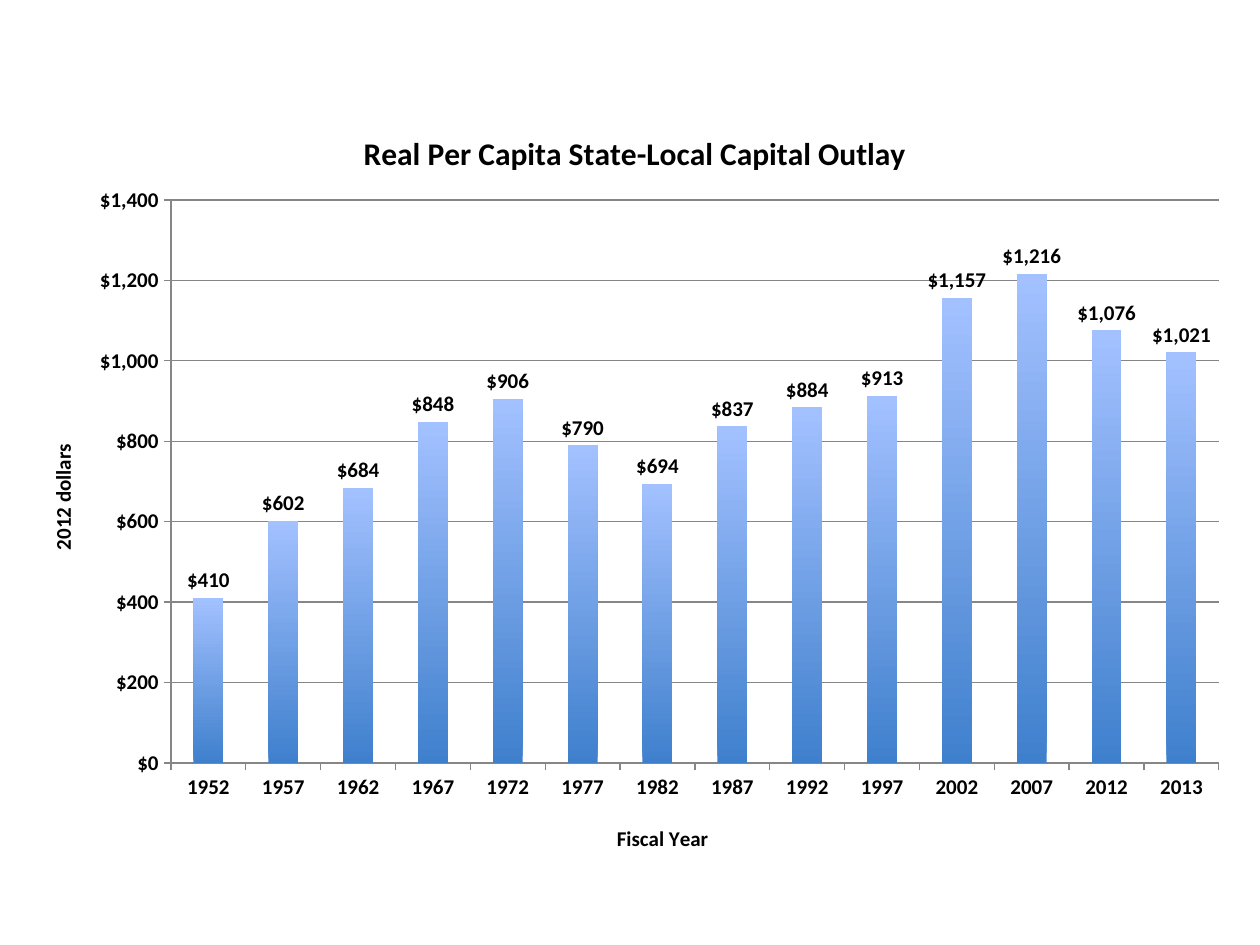
from typing import NamedTuple

from lxml.etree import SubElement
from pptx import Presentation
from pptx.chart.data import CategoryChartData
from pptx.dml.color import RGBColor
from pptx.enum.chart import XL_CHART_TYPE, XL_LABEL_POSITION, XL_TICK_MARK
from pptx.oxml import parse_xml
from pptx.oxml.ns import nsdecls, qn
from pptx.util import Pt

PX = 914400 // 126  # EMU in one px

BLACK = RGBColor(0x00, 0x00, 0x00)
GRID_GRAY = RGBColor(0x86, 0x86, 0x86)
BAR_BOTTOM = RGBColor(0x3F, 0x80, 0xCD)
BAR_TOP = RGBColor(0xA3, 0xC1, 0xFF)
FONT = "Calibri"


class Box(NamedTuple):
    left: int
    top: int
    width: int = 0
    height: int = 0


class Outlay(NamedTuple):
    year: int
    dollars: int


CHART = Box(16, 93, 1227, 781)
PLOT = Box(171, 200, 1048, 563)

OUTLAYS = [
    Outlay(1952, 410), Outlay(1957, 602), Outlay(1962, 684), Outlay(1967, 848),
    Outlay(1972, 906), Outlay(1977, 790), Outlay(1982, 694), Outlay(1987, 837),
    Outlay(1992, 884), Outlay(1997, 913), Outlay(2002, 1157), Outlay(2007, 1216),
    Outlay(2012, 1076), Outlay(2013, 1021),
]


def format_font(font, *, size: int = 12, bold: bool = True) -> None:
    font.name = FONT
    font.size = Pt(size)
    font.bold = bold
    font.color.rgb = BLACK


def place(element, box: Box, index: int) -> None:
    """Fix a chart part at a slide position, as fractions of the chart."""
    for old in element.findall(qn("c:layout")):
        element.remove(old)
    layout = parse_xml(f"<c:layout {nsdecls('c')}><c:manualLayout/></c:layout>")
    manual = layout[0]
    settings = {"xMode": "edge", "yMode": "edge",
                "x": round((box.left - CHART.left) / CHART.width, 4),
                "y": round((box.top - CHART.top) / CHART.height, 4)}
    if box.width:
        settings = {"layoutTarget": "inner", **settings,
                    "w": round(box.width / CHART.width, 4),
                    "h": round(box.height / CHART.height, 4)}
    for tag, value in settings.items():
        SubElement(manual, qn(f"c:{tag}")).set("val", str(value))
    element.insert(index, layout)


def write_title(owner, text: str, *, at: Box, size: int = 12, turn: int = 0) -> None:
    """Title a chart or an axis."""
    owner.has_title = True
    title = owner.chart_title if hasattr(owner, "chart_title") else owner.axis_title
    frame = title.text_frame
    run = frame.paragraphs[0].add_run()
    run.text = text
    format_font(run.font, size=size)
    if turn:
        body = frame._txBody.find(qn("a:bodyPr"))
        body.set("rot", str(turn * 60000))
        body.set("vert", "horz")
    place(title._element, at, 1)


def style_axis(axis, number_format: str) -> None:
    axis.major_tick_mark = XL_TICK_MARK.OUTSIDE
    axis.minor_tick_mark = XL_TICK_MARK.NONE
    axis.format.line.color.rgb = GRID_GRAY
    axis.format.line.width = Pt(0.75)
    axis.tick_labels.number_format = number_format
    axis.tick_labels.number_format_is_linked = False
    format_font(axis.tick_labels.font)


def style_bars(plot) -> None:
    plot.gap_width = 150
    plot.vary_by_categories = False
    bars = plot.series[0]
    bars.invert_if_negative = False
    fill = bars.format.fill
    fill.gradient()
    fill.gradient_angle = 90
    for stop, color in zip(fill.gradient_stops, (BAR_BOTTOM, BAR_TOP)):
        stop.color.rgb = color
    bars.format.line.fill.background()
    # Dollar amounts above the bars
    labels = bars.data_labels
    labels.show_value = True
    labels.position = XL_LABEL_POSITION.OUTSIDE_END
    labels.number_format = '"$"#,##0'
    labels.number_format_is_linked = False
    format_font(labels.font)


def add_outlay_chart(slide) -> None:
    data = CategoryChartData()
    data.categories = [outlay.year for outlay in OUTLAYS]
    data.add_series("Series 1", [outlay.dollars for outlay in OUTLAYS])
    frame = slide.shapes.add_chart(
        XL_CHART_TYPE.COLUMN_CLUSTERED, *(length * PX for length in CHART), data)
    chart = frame.chart
    chart.has_legend = False
    format_font(chart.font, size=10, bold=False)
    place(chart._chartSpace.chart.plotArea, PLOT, 0)
    style_bars(chart.plots[0])

    # Axes
    years, dollars = chart.category_axis, chart.value_axis
    style_axis(years, "General")
    style_axis(dollars, '"$"#,##0')
    dollars.minimum_scale, dollars.maximum_scale = 0, 1400
    dollars.major_unit = 200
    dollars.has_major_gridlines = True
    dollars.major_gridlines.format.line.color.rgb = GRID_GRAY
    dollars.major_gridlines.format.line.width = Pt(0.75)

    # Titles
    write_title(chart, "Real Per Capita State-Local Capital Outlay",
                at=Box(358, 126), size=18)
    write_title(years, "Fiscal Year", at=Box(613, 821))
    write_title(dollars, "2012 dollars", at=Box(45, 440), turn=-90)


def main() -> None:
    deck = Presentation()
    deck.slide_width, deck.slide_height = 1260 * PX, 945 * PX
    add_outlay_chart(deck.slides.add_slide(deck.slide_layouts[6]))
    deck.save("out.pptx")


if __name__ == "__main__":
    main()
